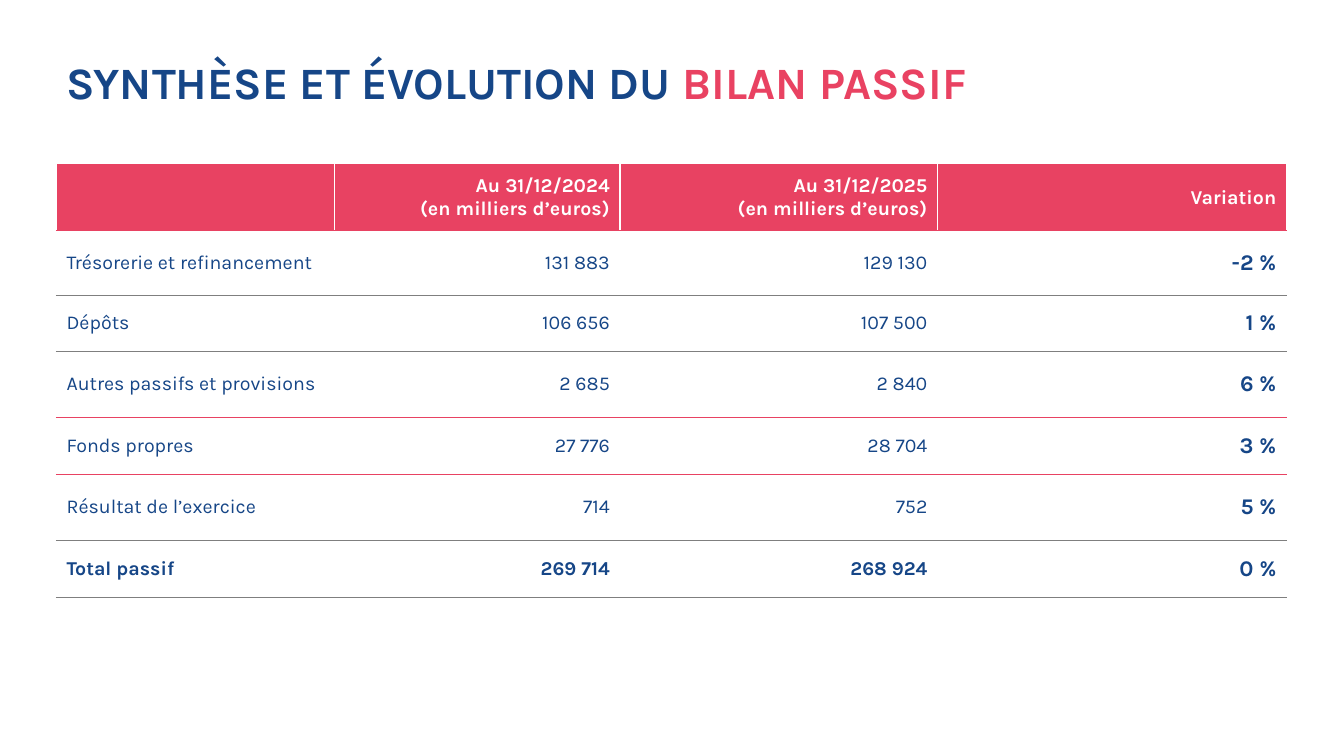
from lxml import etree
from pptx import Presentation
from pptx.dml.color import RGBColor
from pptx.enum.text import MSO_ANCHOR, PP_ALIGN
from pptx.oxml.ns import qn
from pptx.util import Inches, Pt

BLUE = RGBColor(0x16, 0x46, 0x87)
PINK = RGBColor(0xE9, 0x42, 0x62)
ROSE = RGBColor(0xE8, 0x42, 0x62)
GREY = RGBColor(0x7F, 0x7F, 0x7F)
WHITE = RGBColor(0xFF, 0xFF, 0xFF)
LEFT, RIGHT = PP_ALIGN.LEFT, PP_ALIGN.RIGHT
MIDDLE, BOTTOM = MSO_ANCHOR.MIDDLE, MSO_ANCHOR.BOTTOM

# Shares of the slide, in percent
COLS = [20.7, 21.23, 23.63, 25.96]
ROWS = [8.8, 8.53, 7.4, 8.8, 7.47, 8.8, 7.47]
EDGE = 4.2

UNIT = "(en milliers d’euros)"
HEAD = ["", f"Au 31/12/2024\n{UNIT}", f"Au 31/12/2025\n{UNIT}", "Variation"]
BODY = [
    ["Trésorerie et refinancement", "131 883", "129 130", "-2 %"],
    ["Dépôts", "106 656", "107 500", "1 %"],
    ["Autres passifs et provisions", "2 685", "2 840", "6 %"],
    ["Fonds propres", "27 776", "28 704", "3 %"],
    ["Résultat de l’exercice", "714", "752", "5 %"],
    ["Total passif", "269 714", "268 924", "0 %"],
]
RULES = [ROSE, GREY, GREY, ROSE, ROSE, GREY, GREY]


class Deck:
    def __init__(self, font):
        self.font = font
        self.prs = Presentation()
        self.prs.slide_width = Inches(13.33)
        self.prs.slide_height = Inches(7.5)
        self.slide = self.prs.slides.add_slide(self.prs.slide_layouts[6])

    def wide(self, share):
        return round(self.prs.slide_width * share / 100)

    def high(self, share):
        return round(self.prs.slide_height * share / 100)

    def box(self, x, y, w, h):
        return self.wide(x), self.high(y), self.wide(w), self.high(h)

    def run(self, para, text, size, color, bold):
        run = para.add_run()
        run.text = text
        font = run.font
        font.name, font.size, font.bold = self.font, Pt(size), bold
        font.color.rgb = color

    def title(self, place, parts):
        frame = self.slide.shapes.add_textbox(*self.box(*place)).text_frame
        frame.word_wrap = True
        frame.vertical_anchor = BOTTOM
        para = frame.paragraphs[0]
        para.line_spacing = 0.9
        for text, color in parts:
            self.run(para, text, 32, color, True)

    def rule(self, cell, side, color):
        """Draw one edge of a cell; call it before the fill is set."""
        line = etree.SubElement(cell._tc.get_or_add_tcPr(), qn(f"a:ln{side}"), w=str(Pt(1)))
        fill = etree.SubElement(line, qn("a:solidFill"))
        etree.SubElement(fill, qn("a:srgbClr"), val=str(color))

    def cell(self, cell, text, align, size, color, bold):
        cell.vertical_anchor = MIDDLE
        frame = cell.text_frame
        for i, line in enumerate(text.split("\n")):
            para = frame.add_paragraph() if i else frame.paragraphs[0]
            para.alignment = align
            if line:
                self.run(para, line, size, color, bold)

    def table(self, x, y, cols, rows, data, rules):
        place = self.box(x, y, sum(cols), sum(rows))
        grid = self.slide.shapes.add_table(len(rows), len(cols), *place).table
        grid.horz_banding = False
        for col, share in zip(grid.columns, cols):
            col.width = self.wide(share)
        for row, share in zip(grid.rows, rows):
            row.height = self.high(share)
        tops = [ROSE] + rules[:-1]
        last = len(rows) - 1
        for r, texts in enumerate(data):
            for c, text in enumerate(texts):
                cell = grid.cell(r, c)
                self.rule(cell, "T", tops[r])
                self.rule(cell, "B", rules[r])
                if r == 0:
                    cell.fill.solid()
                    cell.fill.fore_color.rgb = ROSE
                else:
                    cell.fill.background()
                rate = r > 0 and c == len(cols) - 1
                self.cell(cell, text, RIGHT if c else LEFT, 16 if rate else 14,
                          BLUE if r else WHITE, rate or r in (0, last))


def main():
    deck = Deck("Karla")
    deck.title((EDGE, 6.93, 88.3, 8.13),
               [("SYNTHÈSE ET ÉVOLUTION DU ", BLUE), ("BILAN PASSIF", PINK)])
    deck.table(EDGE, 21.73, COLS, ROWS, [HEAD] + BODY, RULES)
    deck.prs.save("out.pptx")


if __name__ == "__main__":
    main()
